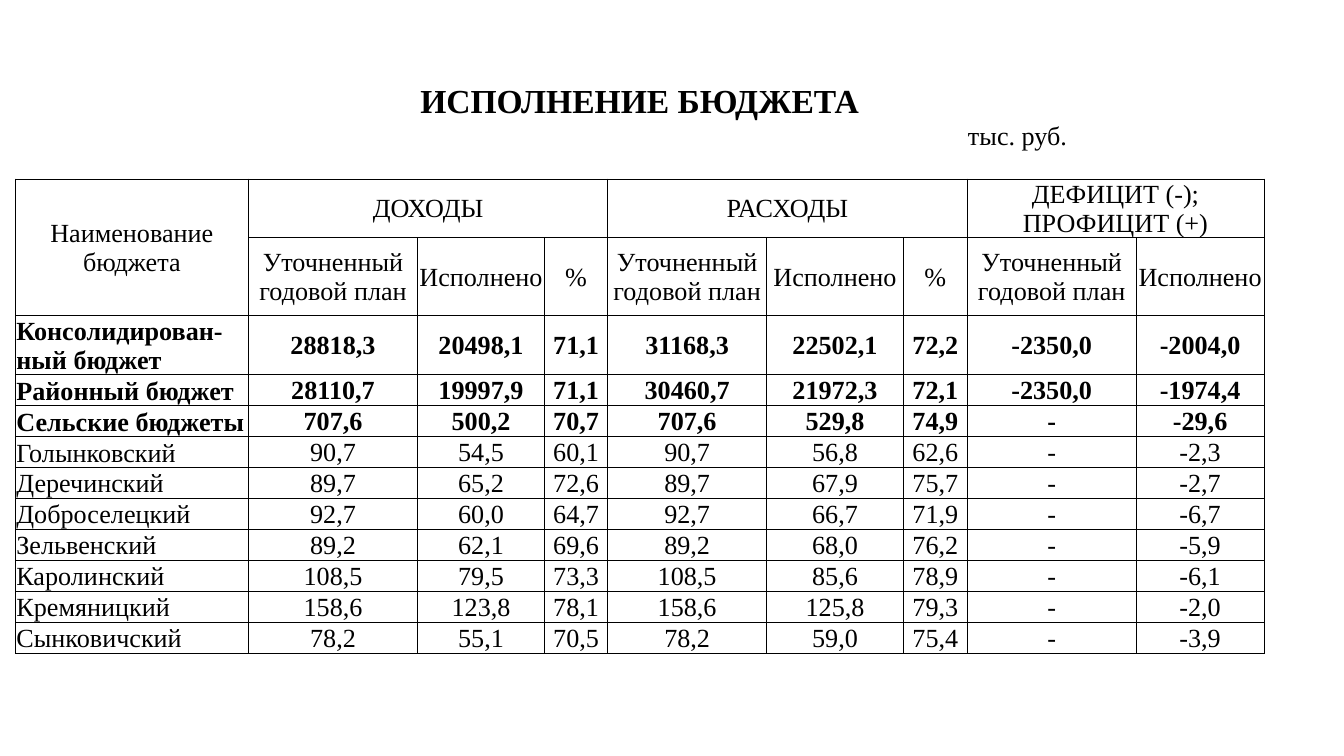
from lxml import etree
from pptx import Presentation
from pptx import util as u
from pptx.dml import color
from pptx.enum import text
from pptx.oxml import ns

Pt = u.Pt
HUES = {"ink": "000000"}
MID, LOW, TOP = text.MSO_ANCHOR.MIDDLE, text.MSO_ANCHOR.BOTTOM, text.MSO_ANCHOR.TOP
LEFT, MEAN = text.PP_ALIGN.LEFT, text.PP_ALIGN.CENTER


def write(cell, words, size=14, bold=False, align=MEAN, anchor=MID):
    cell.vertical_anchor = anchor
    cell.text_frame.text = words
    for para in cell.text_frame.paragraphs:
        para.alignment = align
        for run in para.runs:
            font = run.font
            font.name, font.size, font.bold = "Times New Roman", Pt(size), bold
            font.color.rgb = color.RGBColor.from_string(HUES["ink"])


def edge(cell, drawn):
    """Draw the named sides of a cell and hide the others."""
    props = cell._tc.get_or_add_tcPr()
    for side in "LRTB":
        line = etree.SubElement(props, ns.qn("a:ln" + side), w=str(Pt(0.5)))
        if side in drawn:
            fill = etree.SubElement(line, ns.qn("a:solidFill"))
            etree.SubElement(fill, ns.qn("a:srgbClr"), val=HUES["ink"])
        else:
            etree.SubElement(line, ns.qn("a:noFill"))


wides = [124.8, 72.7, 18, 47, 20.9, 34, 85, 15.1, 58.4, 6.5, 27.5, 90.7, 37.4, 31]
highs = [21, 31, 31, 41.8, 31.6] + [16.6] * 9
# First and last grid column of each visible column
spans = [(0, 0), (1, 2), (3, 4), (5, 5), (6, 6), (7, 8), (9, 10), (11, 11), (12, 13)]
plan, done = "Уточненный годовой план", "Исполнено"
heads = [plan, done, "%", plan, done, "%", plan, done]
groups = [(1, 5, "ДОХОДЫ"), (6, 10, "РАСХОДЫ"), (11, 13, "ДЕФИЦИТ (-); ПРОФИЦИТ (+)")]
data = [
    ("Консолидирован-ный бюджет", "28818,3 20498,1 71,1 31168,3 22502,1 72,2 -2350,0 -2004,0"),
    ("Районный бюджет", "28110,7 19997,9 71,1 30460,7 21972,3 72,1 -2350,0 -1974,4"),
    ("Сельские бюджеты", "707,6 500,2 70,7 707,6 529,8 74,9 - -29,6"),
    ("Голынковский", "90,7 54,5 60,1 90,7 56,8 62,6 - -2,3"),
    ("Деречинский", "89,7 65,2 72,6 89,7 67,9 75,7 - -2,7"),
    ("Доброселецкий", "92,7 60,0 64,7 92,7 66,7 71,9 - -6,7"),
    ("Зельвенский", "89,2 62,1 69,6 89,2 68,0 76,2 - -5,9"),
    ("Каролинский", "108,5 79,5 73,3 108,5 85,6 78,9 - -6,1"),
    ("Кремяницкий", "158,6 123,8 78,1 158,6 125,8 79,3 - -2,0"),
    ("Сынковичский", "78,2 55,1 70,5 78,2 59,0 75,4 - -3,9"),
]

deck = Presentation()
deck.slide_width, deck.slide_height = Pt(720), Pt(405)
slide = deck.slides.add_slide(deck.slide_layouts[6])
frame = slide.shapes.add_table(len(highs), len(wides), Pt(8.3), Pt(44),
                               Pt(sum(wides)), Pt(sum(highs)))
table = frame.table
table.first_row = table.horz_banding = False
for col, wide in zip(table.columns, wides):
    col.width = Pt(wide)
for row, high in zip(table.rows, highs):
    row.height = Pt(high)

for r in range(len(highs)):
    for c in range(len(wides)):
        cell = table.cell(r, c)
        cell.margin_left = cell.margin_right = cell.margin_top = Pt(0.5)
        cell.margin_bottom = 0
        edge(cell, "" if r == 0 else "B" if r == 1 else "LRTB")
        cell.fill.background()

# Title and unit
table.cell(0, 0).merge(table.cell(0, 13))
write(table.cell(0, 0), "ИСПОЛНЕНИЕ БЮДЖЕТА", size=18, bold=True)
for c in (2, 4, 6, 8, 11):
    table.cell(1, c).merge(table.cell(1, c + 1))
write(table.cell(1, 11), "тыс. руб.", align=LEFT, anchor=TOP)

# Column headings
table.cell(2, 0).merge(table.cell(3, 0))
write(table.cell(2, 0), "Наименование\nбюджета")
for first, last, name in groups:
    table.cell(2, first).merge(table.cell(2, last))
    write(table.cell(2, first), name)

# Second heading row and budgets
for r in range(3, len(highs)):
    for first, last in spans:
        if first < last:
            table.cell(r, first).merge(table.cell(r, last))
for (first, last), head in zip(spans[1:], heads):
    write(table.cell(3, first), head)
for r, (name, sums) in enumerate(data, 4):
    bold = r < 7
    write(table.cell(r, 0), name, bold=bold, align=LEFT, anchor=LOW)
    for (first, last), value in zip(spans[1:], sums.split()):
        write(table.cell(r, first), value, bold=bold)

deck.save("out.pptx")
